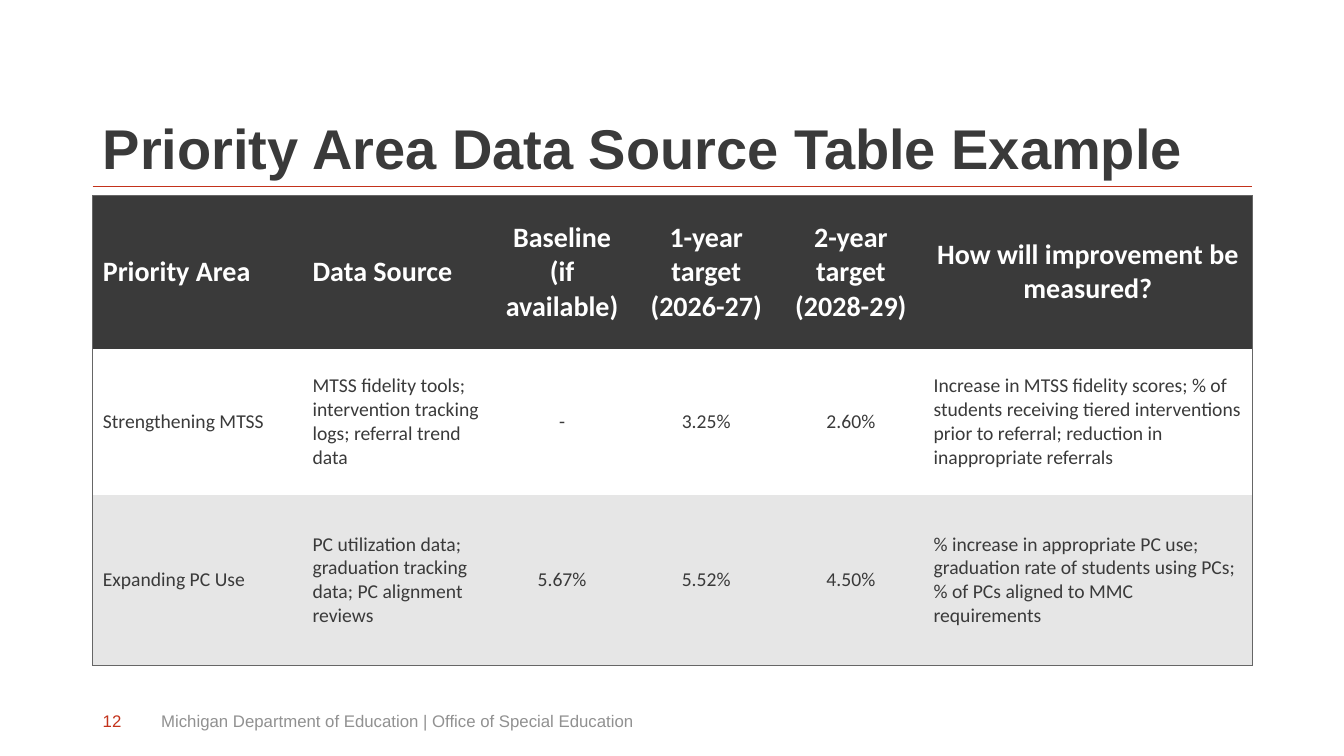
"""Build the slide with the priority area data source table."""
from lxml.etree import SubElement
from pptx import Presentation
from pptx.dml.color import RGBColor
from pptx.enum.shapes import MSO_CONNECTOR as CONNECTOR
from pptx.enum.text import MSO_ANCHOR as ANCHOR, MSO_AUTO_SIZE as AUTO_SIZE, PP_ALIGN as ALIGN
from pptx.oxml import parse_xml
from pptx.oxml.ns import nsdecls, qn
from pptx.util import Pt

PX = 9144
LEFT, WIDTH = 92, 1150
DARK, RED, GREY, BAND, BORDER, WHITE = "3A3A3A", "C3321B", "919191", "E6E6E6", "666666", "FFFFFF"


def rgb(color):
    return RGBColor.from_string(color)


def write(frame, text, font, size, color, bold=False, align=ALIGN.LEFT):
    frame.text = text
    frame.word_wrap = True
    paragraph = frame.paragraphs[0]
    paragraph.alignment = align
    style = paragraph.runs[0].font
    style.name, style.size, style.bold = font, Pt(size), bold
    style.color.rgb = rgb(color)


deck = Presentation()
deck.slide_width, deck.slide_height = 1333 * PX, 750 * PX
slide = deck.slides.add_slide(deck.slide_layouts[5])

rule = slide.shapes.add_connector(CONNECTOR.STRAIGHT, LEFT * PX, 185 * PX, (LEFT + WIDTH) * PX, 185 * PX)
rule.line.color.rgb = rgb(RED)
rule.line.width = Pt(0.5)
SubElement(rule.element.spPr, qn("a:effectLst"))

title = slide.shapes.title
title.left, title.top, title.width, title.height = LEFT * PX, 40 * PX, WIDTH * PX, 145 * PX
write(title.text_frame, "Priority Area Data Source Table Example", "Arial", 40, DARK, True)
title.text_frame.auto_size = AUTO_SIZE.NONE
title.text_frame.vertical_anchor = ANCHOR.BOTTOM
title.text_frame.paragraphs[0].line_spacing = 0.9

ROWS = [
    ("Priority Area", "Data Source", "Baseline (if available)", "1-year target (2026-27)",
     "2-year target (2028-29)", "How will improvement be measured?"),
    ("Strengthening MTSS", "MTSS fidelity tools; intervention tracking logs; referral trend data",
     "-", "3.25%", "2.60%",
     "Increase in MTSS fidelity scores; % of students receiving tiered interventions "
     "prior to referral; reduction in inappropriate referrals"),
    ("Expanding PC Use", "PC utilization data; graduation tracking data; PC alignment reviews",
     "5.67%", "5.52%", "4.50%",
     "% increase in appropriate PC use; graduation rate of students using PCs; "
     "% of PCs aligned to MMC requirements"),
]
COLUMN_WIDTHS = [208, 186, 143, 143, 144, 326]
ROW_HEIGHTS = [152, 145, 169]
ROW_FILLS = [DARK, WHITE, BAND]

priorities = slide.shapes.add_table(
    len(ROWS), len(COLUMN_WIDTHS), LEFT * PX, 194 * PX, WIDTH * PX, sum(ROW_HEIGHTS) * PX).table
priorities.horz_banding = False
for column, width in zip(priorities.columns, COLUMN_WIDTHS):
    column.width = width * PX
for row, height in zip(priorities.rows, ROW_HEIGHTS):
    row.height = height * PX

last_row, last_col = len(ROWS) - 1, len(COLUMN_WIDTHS) - 1
for r, texts in enumerate(ROWS):
    header = r == 0
    for c, text in enumerate(texts):
        cell = priorities.cell(r, c)
        centred = 2 <= c <= 4 or (header and c == last_col)
        write(cell.text_frame, text, "Calibri", 20 if header else 14, WHITE if header else DARK,
              header, ALIGN.CENTER if centred else ALIGN.LEFT)
        cell.vertical_anchor = ANCHOR.MIDDLE
        cell.fill.solid()
        cell.fill.fore_color.rgb = rgb(ROW_FILLS[r])
        outer_sides = {"L": c == 0, "R": c == last_col, "T": header, "B": r == last_row}
        properties = cell._tc.get_or_add_tcPr()
        for position, (side, outer) in enumerate(outer_sides.items()):
            paint = f'<a:solidFill><a:srgbClr val="{BORDER}"/></a:solidFill>' if outer else "<a:noFill/>"
            properties.insert(position, parse_xml(
                f'<a:ln{side} {nsdecls("a")} w="{Pt(0.5)}">{paint}</a:ln{side}>'))

for text, left, width, color in [
    ("12", LEFT, 45, RED),
    ("Michigan Department of Education | Office of Special Education", 150, 839, GREY),
]:
    footer = slide.shapes.add_textbox(left * PX, 695 * PX, width * PX, 40 * PX).text_frame
    write(footer, text, "Arial", 12, color)
    footer.vertical_anchor = ANCHOR.MIDDLE

deck.save("out.pptx")
